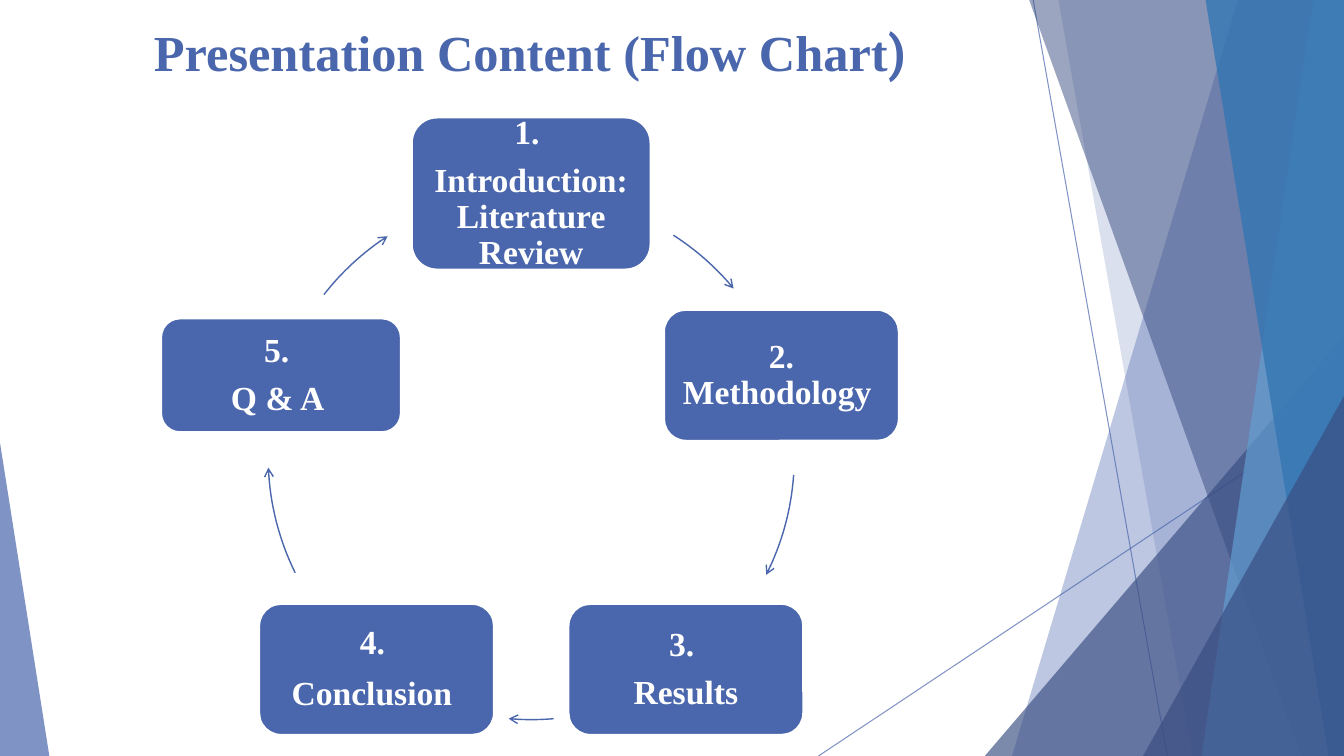
from collections import namedtuple
from math import cos, radians, sin

from lxml import etree
from pptx import Presentation
from pptx import util as u
from pptx.dml.color import RGBColor
from pptx.enum import shapes, text
from pptx.oxml.ns import qn

COLUMNS, ROWS = 160, 90
BLUE, NAVY, SKY, OCEAN, WHITE = "4A66AC", "384C81", "629DD1", "3477B2", "FFFFFF"
SERIF = "Times New Roman"

Box = namedtuple("Box", "left top width height")
Step = namedtuple("Step", "wording width height arrow_start arrow_end")

STEPS = [
    Step("1. \nIntroduction: Literature Review", 28.44, 18.12, -57.3, -39.7),
    Step("2. Methodology ", 27.96, 15.6, 4, 26.7),
    Step("3. \nResults", 27.96, 15.6, 85.1, 94.9),
    Step("4. \nConclusion", 27.96, 15.6, 153.8, 177.6),
    Step("5. \nQ & A ", 28.56, 13.56, 218, 236.9),
]

presentation = Presentation()
presentation.slide_width = u.Inches(13.33)
presentation.slide_height = u.Inches(7.5)


def across(columns):
    return round(presentation.slide_width * columns / COLUMNS)


def down(rows):
    return round(presentation.slide_height * rows / ROWS)


def place(box):
    return across(box.left), down(box.top), across(box.width), down(box.height)


def paint(color_format, color, opacity=100):
    color_format.rgb = RGBColor.from_string(color)


def paint_fill(fill, color, opacity=100):
    fill.solid()
    paint(fill.fore_color, color)
    if opacity < 100:
        add_alpha(fill, opacity)


def add_alpha(fill, opacity):
    color_element = fill._xPr.find(".//" + qn("a:srgbClr"))
    etree.SubElement(color_element, qn("a:alpha")).set("val", str(opacity * 1000))


def style_panel(shape, color, opacity):
    shape.shadow.inherit = False
    paint_fill(shape.fill, color, opacity)
    shape.line.fill.background()


def style_run(run, size, color, font=SERIF):
    run.font.size = u.Pt(size)
    run.font.name = font
    run.font.bold = True
    paint(run.font.color, color)


def draw_outline(slide, points, close):
    corners = [(across(x), down(y)) for x, y in points]
    builder = slide.shapes.build_freeform(*corners[0], scale=1.0)
    builder.add_line_segments(corners[1:], close=close)
    shape = builder.convert_to_shape()
    shape.shadow.inherit = False
    return shape


def draw_hairline(slide, start, end):
    line = slide.shapes.add_connector(
        shapes.MSO_CONNECTOR.STRAIGHT,
        across(start[0]), down(start[1]), across(end[0]), down(end[1]))
    line.line.width = u.Pt(0.75)
    paint_fill(line.line.fill, BLUE, 70)
    etree.SubElement(line.element.spPr, qn("a:effectLst"))


def draw_band(slide, box, top_left, bottom_left, color, opacity):
    right, bottom = box.left + box.width, box.top + box.height
    points = [(box.left + top_left, box.top), (right, box.top),
              (right, bottom), (box.left + bottom_left, bottom)]
    style_panel(draw_outline(slide, points, True), color, opacity)


def draw_wedge(slide, box, peak, color, opacity):
    wedge = slide.shapes.add_shape(
        shapes.MSO_SHAPE.ISOSCELES_TRIANGLE, *place(box))
    wedge.adjustments[0] = peak
    style_panel(wedge, color, opacity)


def draw_corner(slide, box, width, height, opacity=66):
    corner = Box(box.left + box.width - width, box.top + box.height - height,
                 width, height)
    draw_wedge(slide, corner, 1, NAVY, opacity)


def build_backdrop(slide, box):
    right, bottom = box.left + box.width, box.top + box.height
    draw_hairline(slide, (box.left + 25.56, box.top), (box.left + 41.52, bottom))
    draw_hairline(slide, (right, box.top + 48.36), (box.left, bottom))
    draw_band(slide, box, 49.92, 23.04, BLUE, 36)
    draw_band(slide, box, 28.56, 44.52, BLUE, 20)
    draw_corner(slide, box, 42.76, 50.04)
    draw_band(slide, box, 25.08, 57.48, NAVY, 50)
    draw_band(slide, box, 58.92, 45.6, SKY, 70)
    draw_band(slide, box, 46.08, 60.72, OCEAN, 80)
    draw_corner(slide, box, 23.92, 42.84)


def build_title(slide, box):
    title = slide.shapes.title
    title.left, title.top, title.width, title.height = place(box)
    title.element.getparent().append(title.element)
    frame = title.text_frame
    frame.auto_size = text.MSO_AUTO_SIZE.NONE
    frame.vertical_anchor = text.MSO_ANCHOR.TOP
    frame.text = "Presentation Content (Flow Chart"
    paragraph = frame.paragraphs[0]
    paragraph.alignment = text.PP_ALIGN.CENTER
    style_run(paragraph.runs[0], 36, BLUE)
    closing = paragraph.add_run()
    closing.text = ") "
    style_run(closing, 36, BLUE, "Roboto")


def on_circle(box, degrees):
    radius_x, radius_y = box.width / 2, box.height / 2
    return (box.left + radius_x * (1 + cos(radians(degrees))),
            box.top + radius_y * (1 + sin(radians(degrees))))


def draw_step(slide, step, center):
    box = Box(center[0] - step.width / 2, center[1] - step.height / 2,
              step.width, step.height)
    card = slide.shapes.add_shape(
        shapes.MSO_SHAPE.ROUNDED_RECTANGLE, *place(box))
    style_panel(card, BLUE, 100)
    paint_fill(card.line.fill, WHITE)
    card.line.width = u.Pt(1.5)
    frame = card.text_frame
    frame.word_wrap = True
    frame.vertical_anchor = text.MSO_ANCHOR.MIDDLE
    frame.margin_left = frame.margin_right = u.Inches(0.1)
    frame.margin_top = frame.margin_bottom = u.Inches(0.1)
    frame.text = step.wording
    for paragraph in frame.paragraphs:
        paragraph.alignment = text.PP_ALIGN.CENTER
        paragraph.line_spacing = 0.9
        paragraph.space_after = u.Pt(8.4)
        style_run(paragraph.runs[0], 24, WHITE)
    return frame


def draw_arc_arrow(slide, box, start, end, pieces=16):
    points = [on_circle(box, start + (end - start) * piece / pieces)
              for piece in range(pieces + 1)]
    arrow = draw_outline(slide, points, False)
    arrow.fill.background()
    paint_fill(arrow.line.fill, BLUE)
    arrow.line.width = u.Pt(1)
    outline = arrow.element.spPr.find(qn("a:ln"))
    etree.SubElement(outline, qn("a:tailEnd")).set("type", "arrow")


def build_cycle(slide, box):
    for index, step in enumerate(STEPS):
        angle = -90 + index * 360 / len(STEPS)
        frame = draw_step(slide, step, on_circle(box, angle))
        if step.wording.endswith("Conclusion"):
            space = frame.paragraphs[-1].add_run()
            space.text = " "
            style_run(space, 27, WHITE)
        draw_arc_arrow(slide, box, step.arrow_start, step.arrow_end)


def main():
    slide = presentation.slides.add_slide(presentation.slide_layouts[5])
    build_backdrop(slide, Box(97.44, 0, COLUMNS - 97.44, ROWS))
    draw_wedge(slide, Box(0, 52.68, 5.88, 37.32), 0, BLUE, 70)
    build_title(slide, Box(7.44, 1.92, 112.8, 17.28))
    build_cycle(slide, Box(31.92, 23.04, 62.64, 62.64))
    presentation.save("out.pptx")


if __name__ == "__main__":
    main()
